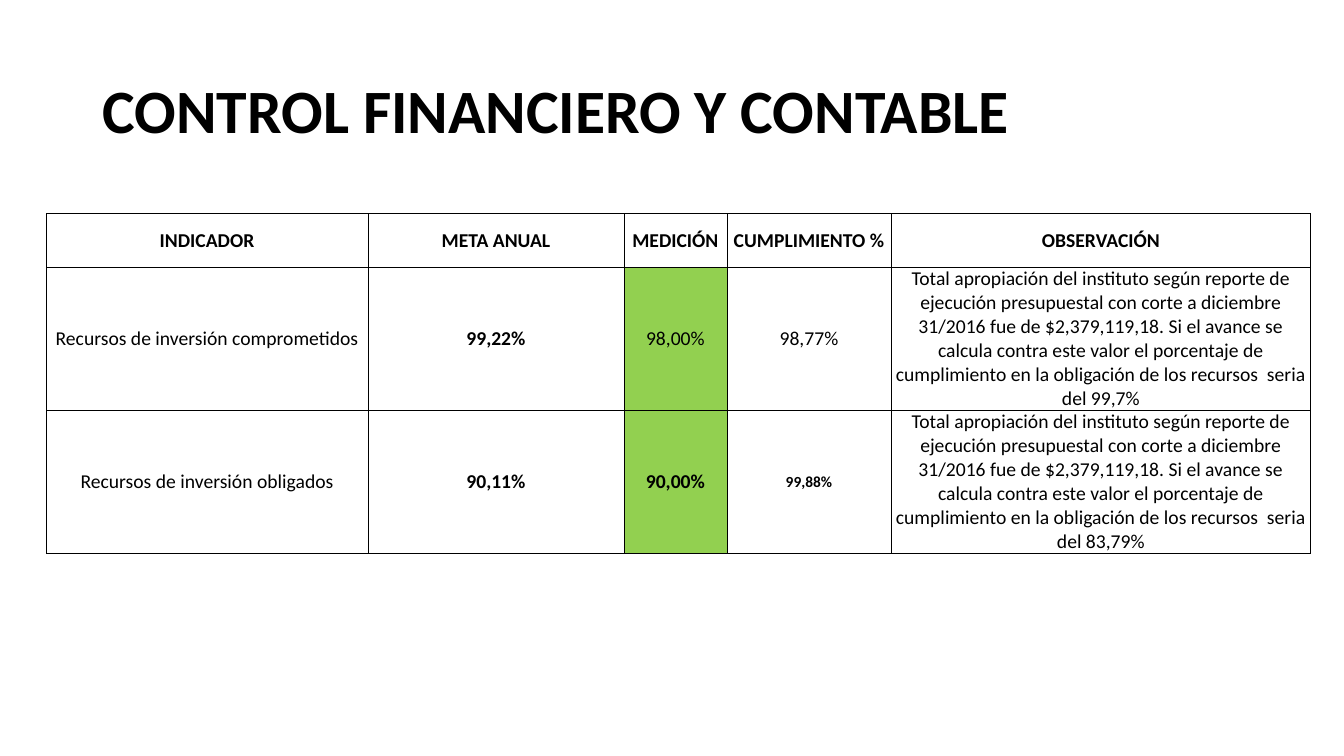
from dataclasses import dataclass

from lxml import etree
from pptx import Presentation
from pptx.dml.color import RGBColor
from pptx.enum import text
from pptx.oxml import ns
from pptx.util import Inches, Pt

BLACK = RGBColor(0x00, 0x00, 0x00)
WHITE = RGBColor(0xFF, 0xFF, 0xFF)
GREEN = RGBColor(0x92, 0xD0, 0x50)
FONT = "Calibri"

COLUMN_WIDTHS = (3.19, 2.54, 1.02, 1.63, 4.16)
ROW_HEIGHTS = (0.53, 1.42, 1.42)
HEADERS = ("INDICADOR", "META ANUAL", "MEDICIÓN", "CUMPLIMIENTO %", "OBSERVACIÓN")
OBSERVATION = (
    "Total apropiación del instituto según reporte de ejecución presupuestal "
    "con corte a diciembre 31/2016 fue de $2,379,119,18. Si el avance se calcula "
    "contra este valor el porcentaje de cumplimiento en la obligación de los "
    "recursos  seria del "
)


@dataclass
class Cell:
    label: str
    bold: bool = False
    size: float = 14
    fill: RGBColor | None = None


ROWS = (
    [Cell(header, bold=True) for header in HEADERS],
    [
        Cell("Recursos de inversión comprometidos", fill=WHITE),
        Cell("99,22%", bold=True),
        Cell("98,00%", fill=GREEN),
        Cell("98,77%"),
        Cell(OBSERVATION + "99,7%"),
    ],
    [
        Cell("Recursos de inversión obligados", fill=WHITE),
        Cell("90,11%", bold=True),
        Cell("90,00%", bold=True, fill=GREEN),
        Cell("99,88%", bold=True, size=11),
        Cell(OBSERVATION + "83,79%"),
    ],
)


def write_text(tf, label: str, *, size: float, bold: bool = False,
               align=text.PP_ALIGN.LEFT, line_spacing: float | None = None) -> None:
    tf.word_wrap = True
    p = tf.paragraphs[0]
    p.alignment = align
    p.line_spacing = line_spacing
    r = p.add_run()
    r.text = label
    r.font.name = FONT
    r.font.size = Pt(size)
    r.font.bold = bold
    r.font.color.rgb = BLACK


def set_borders(cell, top_width: float) -> None:
    widths = {"a:lnL": 0.5, "a:lnR": 0.5, "a:lnT": top_width, "a:lnB": 0.5}
    properties = cell._tc.get_or_add_tcPr()
    # Border elements come before the fill
    for position, (tag, width) in enumerate(widths.items()):
        line = etree.Element(ns.qn(tag), w=str(Pt(width)))
        solid = etree.SubElement(line, ns.qn("a:solidFill"))
        etree.SubElement(solid, ns.qn("a:srgbClr"), val=str(BLACK))
        properties.insert(position, line)


def draw_cell(cell, content: Cell, top_width: float) -> None:
    cell.margin_left = cell.margin_right = cell.margin_top = cell.margin_bottom = 0
    cell.vertical_anchor = text.MSO_ANCHOR.MIDDLE
    if content.fill is None:
        cell.fill.background()
    else:
        cell.fill.solid()
        cell.fill.fore_color.rgb = content.fill
    write_text(cell.text_frame, content.label, size=content.size,
               bold=content.bold, align=text.PP_ALIGN.CENTER)
    set_borders(cell, top_width)


def draw_title(s) -> None:
    box = s.shapes.add_textbox(Inches(0.92), Inches(0.4), Inches(11.5), Inches(1.45))
    box.text_frame.vertical_anchor = text.MSO_ANCHOR.MIDDLE
    write_text(box.text_frame, "CONTROL FINANCIERO Y CONTABLE",
               size=44, bold=True, line_spacing=0.9)


def draw_table(s) -> None:
    table = s.shapes.add_table(
        len(ROWS), len(HEADERS), Inches(0.46), Inches(2.12),
        Inches(sum(COLUMN_WIDTHS)), Inches(sum(ROW_HEIGHTS))).table
    table.first_row = table.horz_banding = False
    for column, width in zip(table.columns, COLUMN_WIDTHS):
        column.width = Inches(width)
    for row, height in zip(table.rows, ROW_HEIGHTS):
        row.height = Inches(height)
    for i, contents in enumerate(ROWS):
        for j, content in enumerate(contents):
            draw_cell(table.cell(i, j), content, top_width=1 if i == 0 else 0.5)


def main() -> None:
    prs = Presentation()
    prs.slide_width, prs.slide_height = Inches(13.33), Inches(7.5)
    s = prs.slides.add_slide(prs.slide_layouts[6])
    draw_title(s)
    draw_table(s)
    prs.save("out.pptx")


if __name__ == "__main__":
    main()
